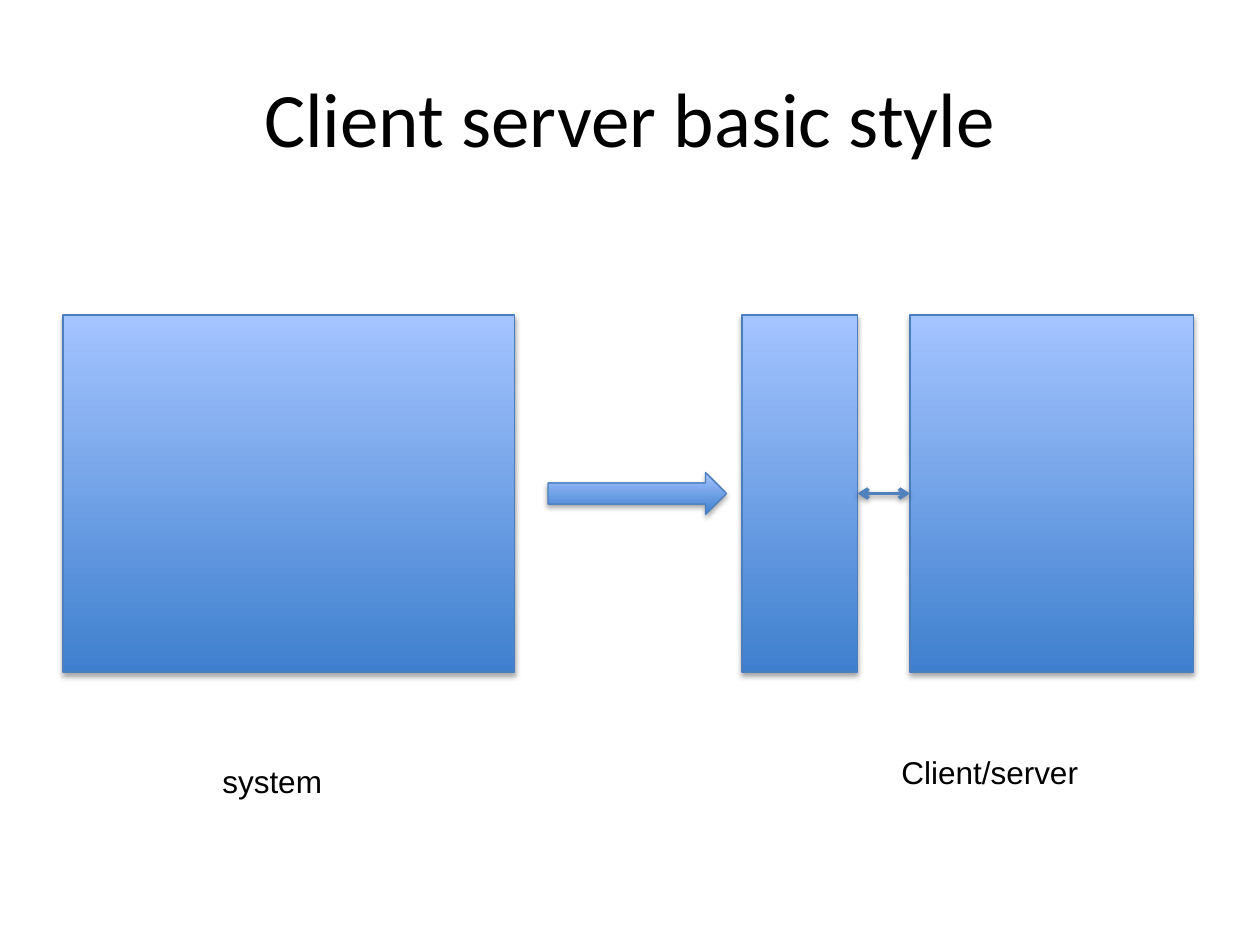
from lxml import etree
from pptx import Presentation
from pptx.dml.color import RGBColor
from pptx.enum.shapes import MSO_CONNECTOR, MSO_SHAPE
from pptx.enum.text import MSO_ANCHOR, MSO_AUTO_SIZE, PP_ALIGN
from pptx.oxml import parse_xml
from pptx.oxml.ns import qn
from pptx.util import Pt

RECTANGLE = MSO_SHAPE.RECTANGLE
RIGHT_ARROW = MSO_SHAPE.RIGHT_ARROW
STRAIGHT = MSO_CONNECTOR.STRAIGHT
MIDDLE = MSO_ANCHOR.MIDDLE
FIT_SHAPE = MSO_AUTO_SIZE.SHAPE_TO_FIT_TEXT
CENTER = PP_ALIGN.CENTER

BLACK = RGBColor(0x00, 0x00, 0x00)
GRADIENT_BOTTOM = RGBColor(0x3F, 0x80, 0xCE)
GRADIENT_TOP = RGBColor(0xA4, 0xC4, 0xFF)
OUTLINE = RGBColor(0x4B, 0x7E, 0xBC)
LINK = RGBColor(0x4F, 0x81, 0xBD)

BOX_TOP = 180
BOX_HEIGHT = 204
MIDLINE = BOX_TOP + BOX_HEIGHT / 2
ARROW_HEIGHT = 24
CLIENT_LEFT = 424
CLIENT_WIDTH = 66
SERVER_LEFT = 520

DRAWING = "http://schemas.openxmlformats.org/drawingml/2006/main"


def add_shadow(shape, distance, opacity):
    shape._element.spPr.append(parse_xml(
        f'<a:effectLst xmlns:a="{DRAWING}">'
        f'<a:outerShdw blurRad="{Pt(3.15)}" dist="{Pt(distance)}" dir="5400000" rotWithShape="0">'
        f'<a:srgbClr val="{BLACK}"><a:alpha val="{opacity * 1000}"/></a:srgbClr>'
        '</a:outerShdw></a:effectLst>'))


def add_gradient_shape(slide, kind, left, top, width, height):
    shape = slide.shapes.add_shape(kind, Pt(left), Pt(top), Pt(width), Pt(height))
    shape.fill.gradient()
    shape.fill.gradient_angle = 90
    stops = shape.fill.gradient_stops
    for stop, position, color in zip(stops, (0, 1), (GRADIENT_BOTTOM, GRADIENT_TOP)):
        stop.position = position
        stop.color.rgb = color
    shape.line.color.rgb = OUTLINE
    shape.line.width = Pt(0.75)
    add_shadow(shape, 1.8, 35)


def add_double_arrow(slide, start, end, y):
    connector = slide.shapes.add_connector(STRAIGHT, Pt(start), Pt(y), Pt(end), Pt(y))
    connector.line.color.rgb = LINK
    connector.line.width = Pt(2)
    line = connector._element.spPr.find(qn("a:ln"))
    for tag in ("a:headEnd", "a:tailEnd"):
        etree.SubElement(line, qn(tag), type="arrow")
    add_shadow(connector, 1.6, 38)


def add_text(slide, text, left, top, width, height, font, size):
    box = slide.shapes.add_textbox(Pt(left), Pt(top), Pt(width), Pt(height))
    paragraph = box.text_frame.paragraphs[0]
    run = paragraph.add_run()
    run.text = text
    run.font.name = font
    run.font.size = Pt(size)
    run.font.color.rgb = BLACK
    return box.text_frame


def add_title(slide, text):
    frame = add_text(slide, text, 36, 21.6, 648, 90, "Calibri", 44)
    frame.word_wrap = True
    frame.vertical_anchor = MIDDLE
    frame.paragraphs[0].alignment = CENTER


def add_caption(slide, text, left, top, width):
    frame = add_text(slide, text, left, top, width, 29, "Arial", 18)
    frame.word_wrap = False
    frame.auto_size = FIT_SHAPE


def main():
    presentation = Presentation()
    presentation.slide_width = Pt(720)
    presentation.slide_height = Pt(540)
    slide = presentation.slides.add_slide(presentation.slide_layouts[6])

    add_title(slide, "Client server basic style")
    add_gradient_shape(slide, RECTANGLE, 36, BOX_TOP, 258, BOX_HEIGHT)
    add_caption(slide, "system", 120, 432, 72)
    add_gradient_shape(slide, RIGHT_ARROW, 313.2, MIDLINE - ARROW_HEIGHT / 2, 102, ARROW_HEIGHT)
    for left, width in ((CLIENT_LEFT, CLIENT_WIDTH), (SERVER_LEFT, 162)):
        add_gradient_shape(slide, RECTANGLE, left, BOX_TOP, width, BOX_HEIGHT)
    add_double_arrow(slide, CLIENT_LEFT + CLIENT_WIDTH, SERVER_LEFT, MIDLINE)
    add_caption(slide, "Client/server", 508, 427, 117)

    presentation.save("out.pptx")


if __name__ == "__main__":
    main()
